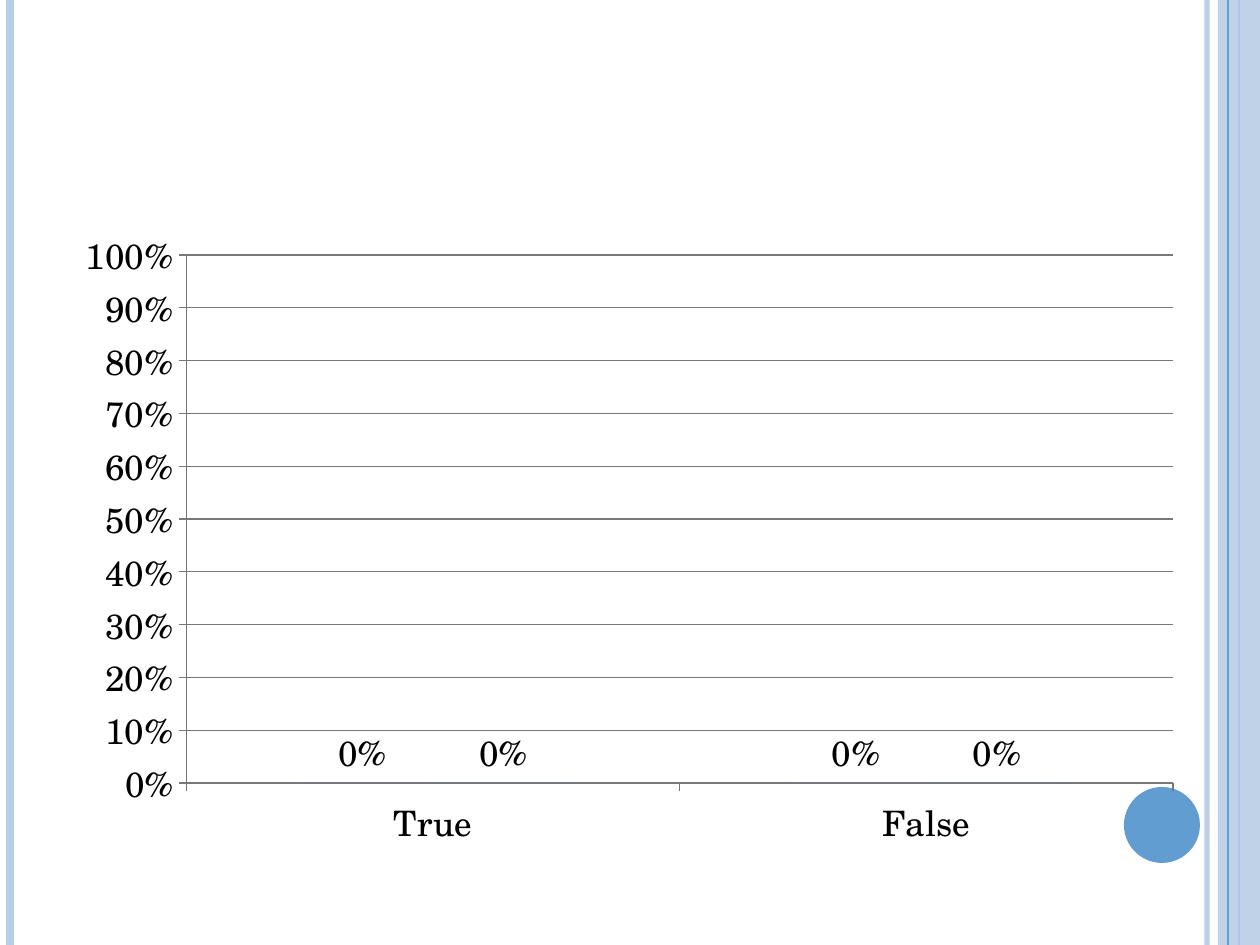
import pptx
import pptx.chart.data
import pptx.dml.color
import pptx.enum.chart
import pptx.enum.shapes
import pptx.oxml
import pptx.oxml.ns
import pptx.util

SCALE = 914400 / 126
WIDTH, HEIGHT = 1260, 945
FONT = "TeX Gyre Schola"
PALE, BLUE, DEEP, GREY = "B7CCE5", "629DD1", "297FD5", "777777"


def px(length):
    """Turn pixels into EMU."""
    return pptx.util.Emu(round(length * SCALE))


def color(value):
    """Turn a hex string into a colour."""
    return pptx.dml.color.RGBColor.from_string(value)


def set_alpha(element, percent):
    """Make the solid colour inside an element partly transparent."""
    solid = element.find(".//" + pptx.oxml.ns.qn("a:srgbClr"))
    alpha = solid.makeelement(pptx.oxml.ns.qn("a:alpha"), {"val": str(percent * 1000)})
    solid.append(alpha)


def add_stripe(slide, x, value, weight, opacity=100):
    """Draw a vertical line over the full slide height."""
    line = slide.shapes.add_connector(
        pptx.enum.shapes.MSO_CONNECTOR.STRAIGHT, px(x), 0, px(x), px(HEIGHT))
    line.line.color.rgb = color(value)
    line.line.width = pptx.util.Pt(weight)
    properties = line._element.spPr
    if opacity < 100:
        set_alpha(properties, opacity)
    properties.append(properties.makeelement(pptx.oxml.ns.qn("a:effectLst"), {}))


def add_block(slide, kind, box, value, opacity=100):
    """Draw a filled shape without an outline."""
    shape = slide.shapes.add_shape(kind, *map(px, box))
    shape.shadow.inherit = False
    shape.fill.solid()
    shape.fill.fore_color.rgb = color(value)
    shape.line.fill.background()
    if opacity < 100:
        set_alpha(shape._element.spPr, opacity)


def set_plot_area(chart, box, plot_box):
    """Fix the inner plot area inside the chart frame."""
    left, top, width, height = box
    x, y, plot_width, plot_height = plot_box
    parts = {"x": (x - left) / width, "y": (y - top) / height,
             "w": plot_width / width, "h": plot_height / height}
    modes = "".join(f'<c:{name}Mode val="edge"/>' for name in "xy")
    values = "".join(f'<c:{name} val="{part:.3f}"/>' for name, part in parts.items())
    layout = pptx.oxml.parse_xml(
        f'<c:layout {pptx.oxml.ns.nsdecls("c")}><c:manualLayout>'
        f'<c:layoutTarget val="inner"/>{modes}{values}</c:manualLayout></c:layout>')
    plot_area = chart._chartSpace.chart.plotArea
    for old in plot_area.findall(pptx.oxml.ns.qn("c:layout")):
        plot_area.remove(old)
    plot_area.insert(0, layout)


def style_axis(axis):
    """Give an axis grey lines and outside ticks."""
    axis.format.line.color.rgb = color(GREY)
    axis.major_tick_mark = pptx.enum.chart.XL_TICK_MARK.OUTSIDE
    axis.minor_tick_mark = pptx.enum.chart.XL_TICK_MARK.NONE


def add_answer_chart(slide, box, plot_box):
    """Add the column chart of answers."""
    data = pptx.chart.data.CategoryChartData(number_format="0%")
    data.categories = ["True", "False"]
    for name in ("Series 1", "Series 2"):
        data.add_series(name, (0, 0))
    chart = slide.shapes.add_chart(
        pptx.enum.chart.XL_CHART_TYPE.COLUMN_CLUSTERED, *map(px, box), data).chart
    chart.has_title = False
    chart.has_legend = False
    chart.font.name = FONT
    chart.font.size = pptx.util.Pt(20)
    chart.font.color.rgb = color("000000")
    style_axis(chart.category_axis)
    values = chart.value_axis
    style_axis(values)
    values.minimum_scale, values.maximum_scale, values.major_unit = 0, 1, 0.1
    values.has_major_gridlines = True
    values.major_gridlines.format.line.color.rgb = color(GREY)
    values.tick_labels.number_format = "0%"
    values.tick_labels.number_format_is_linked = False
    plot = chart.plots[0]
    plot.gap_width = 150
    plot.vary_by_categories = False
    for series, value in zip(plot.series, (BLUE, DEEP)):
        series.format.fill.solid()
        series.format.fill.fore_color.rgb = color(value)
        labels = series.data_labels
        labels.show_value = True
        labels.number_format = "0%"
        labels.number_format_is_linked = False
        labels.position = pptx.enum.chart.XL_LABEL_POSITION.OUTSIDE_END
    set_plot_area(chart, box, plot_box)


def main():
    """Build and save the slide."""
    presentation = pptx.Presentation()
    presentation.slide_width, presentation.slide_height = px(WIDTH), px(HEIGHT)
    slide = presentation.slides.add_slide(presentation.slide_layouts[6])
    shapes = pptx.enum.shapes.MSO_SHAPE
    add_stripe(slide, 1207, PALE, 3, 93)
    add_stripe(slide, 10, PALE, 4.5)
    add_stripe(slide, 1239, BLUE, 1.5)
    add_block(slide, shapes.RECTANGLE, (1218, 0, 42, HEIGHT), PALE, 87)
    add_stripe(slide, 1228, BLUE, 0.75)
    add_block(slide, shapes.OVAL, (1124, 787, 76, 76), BLUE)
    add_answer_chart(slide, (63, 217, 1134, 645), (187, 255, 987, 528))
    presentation.save("out.pptx")


if __name__ == "__main__":
    main()
